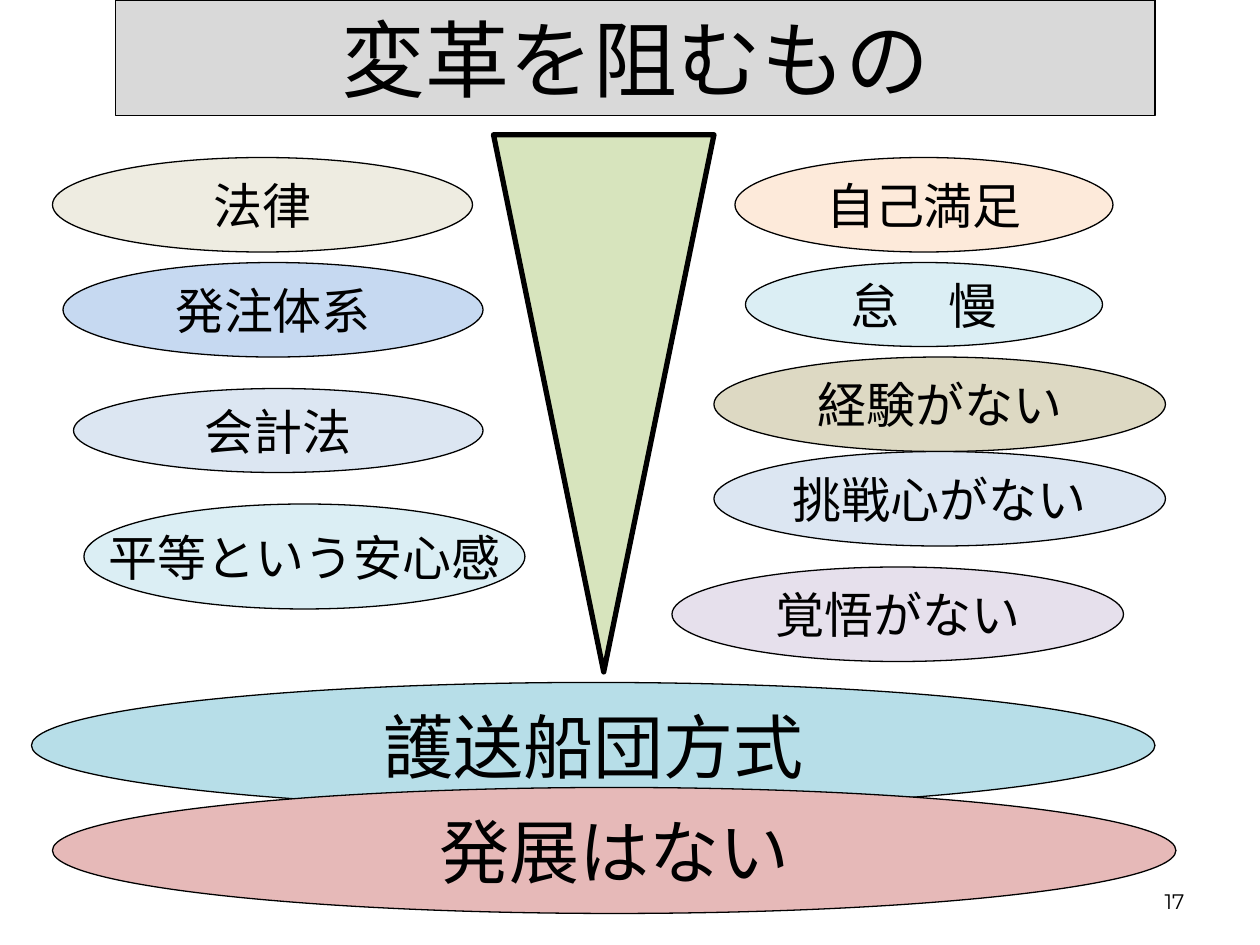
from pptx import Presentation
from pptx.dml.color import RGBColor
from pptx.enum.shapes import MSO_SHAPE as Shape
from pptx.enum.text import MSO_ANCHOR as Anchor, PP_ALIGN as Align
from pptx.util import Pt

BLACK = RGBColor(0x00, 0x00, 0x00)
GRAY = RGBColor(0xD9, 0xD9, 0xD9)
IVORY = RGBColor(0xEE, 0xEC, 0xE1)
TAN = RGBColor(0xDD, 0xD9, 0xC3)
PEACH = RGBColor(0xFD, 0xEA, 0xDA)
ROSE = RGBColor(0xE6, 0xB9, 0xB8)
GREEN = RGBColor(0xD7, 0xE4, 0xBD)
PALE_AQUA = RGBColor(0xDB, 0xEE, 0xF4)
AQUA = RGBColor(0xB7, 0xDE, 0xE8)
PALE_BLUE = RGBColor(0xDC, 0xE6, 0xF2)
BLUE = RGBColor(0xC6, 0xD9, 0xF1)
LILAC = RGBColor(0xE6, 0xE0, 0xEC)


class Deck:
    font = "Karla"
    number_font = "Montserrat"

    def __init__(self, width, height):
        self.prs = Presentation()
        self.prs.slide_width, self.prs.slide_height = Pt(width), Pt(height)
        self.s = self.prs.slides.add_slide(self.prs.slide_layouts[6])

    def add_text(self, sp, text, size, font, align, wrap):
        tf = sp.text_frame
        tf.word_wrap = wrap
        tf.vertical_anchor = Anchor.MIDDLE
        p = tf.paragraphs[0]
        p.alignment = align
        r = p.add_run()
        r.text = text
        r.font.size, r.font.name = Pt(size), font
        r.font.color.rgb = BLACK

    def shape(self, kind, box, fill, line=0.75):
        sp = self.s.shapes.add_shape(kind, *map(Pt, box))
        sp.shadow.inherit = False
        sp.fill.solid()
        sp.fill.fore_color.rgb = fill
        sp.line.color.rgb = BLACK
        sp.line.width = Pt(line)
        return sp

    def label(self, kind, text, box, fill, size):
        sp = self.shape(kind, box, fill)
        self.add_text(sp, text, size, self.font, Align.CENTER, False)

    def oval(self, text, box, fill, size=28):
        self.label(Shape.OVAL, text, box, fill, size)

    def wedge(self, box, fill):
        sp = self.shape(Shape.DOWN_ARROW, box, fill, 3)
        # The head takes up the whole height
        sp.adjustments[0], sp.adjustments[1] = 0.6, 2.87

    def page_number(self, text, box):
        sp = self.s.shapes.add_textbox(*map(Pt, box))
        self.add_text(sp, text, 12, self.number_font, Align.RIGHT, True)


def main():
    deck = Deck(720, 540)

    # Page number and title
    deck.page_number("17", (516, 500.5, 168, 28.5))
    deck.label(Shape.RECTANGLE, "変革を阻むもの", (66, 0, 594, 66), GRAY, 48)

    # Left: systems
    for text, box, fill in (
        ("法律", (30, 90, 240, 54), IVORY),
        ("発注体系", (36, 150, 240, 54), BLUE),
        ("会計法", (42, 222, 234, 48), PALE_BLUE),
        ("平等という安心感", (48, 288, 252, 60), PALE_AQUA),
    ):
        deck.oval(text, box, fill)

    # Centre: wedge pointing down at the outcome
    deck.wedge((282, 77, 126, 307), GREEN)

    # Right: attitudes
    for text, box, fill in (
        ("自己満足", (420, 90, 216, 54), PEACH),
        ("怠　慢", (426, 150, 204, 48), PALE_AQUA),
        ("経験がない", (408, 204, 258, 54), TAN),
        ("挑戦心がない", (408, 258, 258, 54), PALE_BLUE),
        ("覚悟がない", (384, 324, 258, 54), LILAC),
    ):
        deck.oval(text, box, fill)

    # Bottom: outcome
    deck.oval("護送船団方式", (18, 390, 642, 72), AQUA, 40)
    deck.oval("発展はない", (30, 450, 642, 72), ROSE, 40)

    deck.prs.save("out.pptx")


if __name__ == "__main__":
    main()
